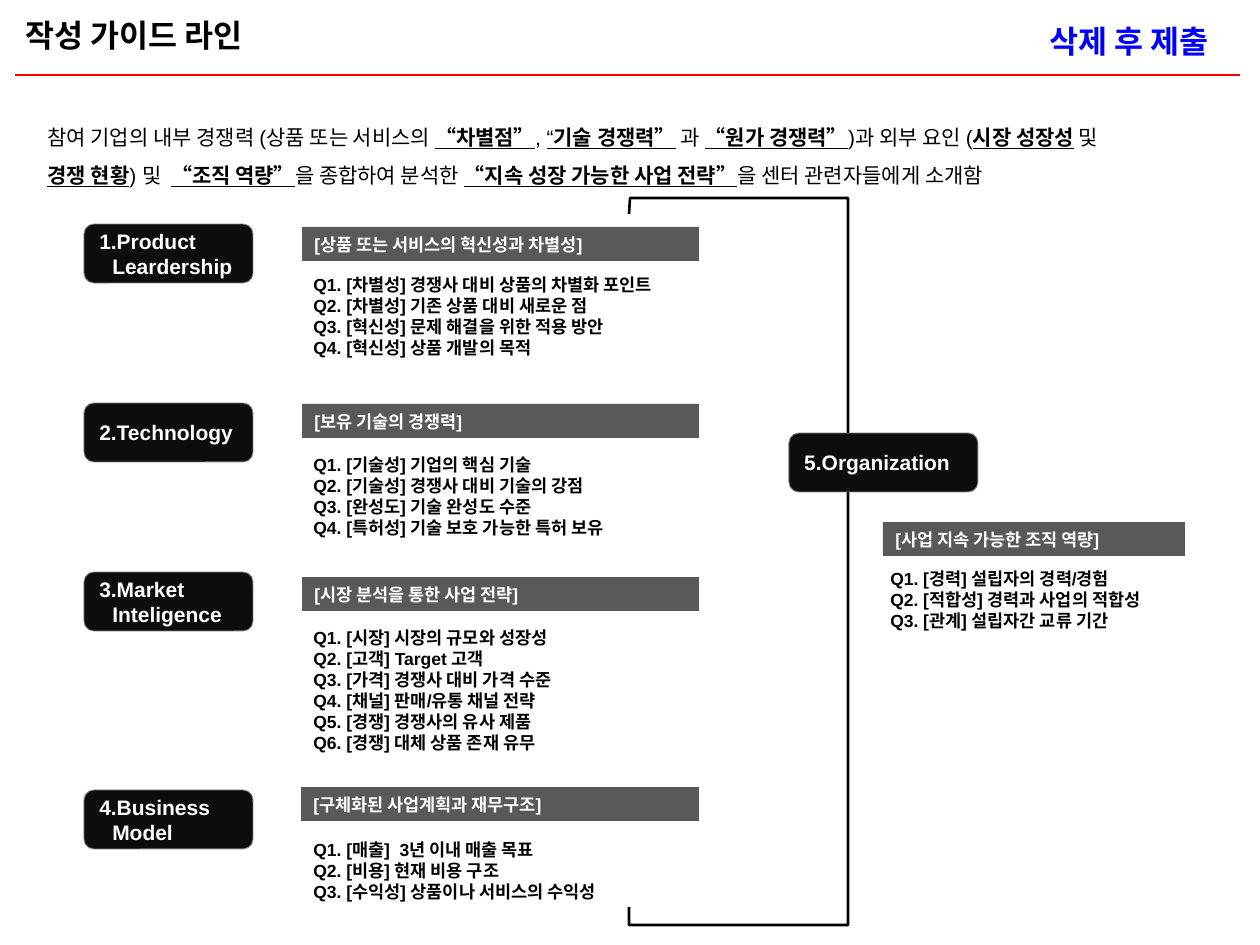
from lxml import etree
from pptx import Presentation
from pptx.dml.color import RGBColor
from pptx.enum.shapes import MSO_CONNECTOR, MSO_SHAPE
from pptx.enum.text import MSO_ANCHOR as ANCHOR, PP_ALIGN as ALIGN
from pptx.oxml.ns import qn
from pptx.util import Pt

EMU_PER_PX = 914400 / 126
FONT = "Arial"
BLACK = RGBColor(0x00, 0x00, 0x00)
WHITE = RGBColor(0xFF, 0xFF, 0xFF)
RED = RGBColor(0xFF, 0x00, 0x00)
BLUE = RGBColor(0x00, 0x00, 0xFF)
CHARCOAL = RGBColor(0x0D, 0x0D, 0x0D)
DARK_GRAY = RGBColor(0x59, 0x59, 0x59)
MID_GRAY = RGBColor(0x80, 0x80, 0x80)

# Label: text, box. Header: text, box. Questions: left, top, width, lines.
SECTIONS = [
    (("1.Product Leardership", (84, 224, 169, 59)),
     ("[상품 또는 서비스의 혁신성과 차별성]", (302, 227, 397, 34)),
     (301, 268, 404, ["Q1. [차별성] 경쟁사 대비 상품의 차별화 포인트",
                      "Q2. [차별성] 기존 상품 대비 새로운 점",
                      "Q3. [혁신성] 문제 해결을 위한 적용 방안",
                      "Q4. [혁신성] 상품 개발의 목적"])),
    (("2.Technology", (84, 403, 169, 59)),
     ("[보유 기술의 경쟁력]", (302, 404, 397, 34)),
     (301, 448, 352, ["Q1. [기술성] 기업의 핵심 기술",
                      "Q2. [기술성] 경쟁사 대비 기술의 강점",
                      "Q3. [완성도] 기술 완성도 수준",
                      "Q4. [특허성] 기술 보호 가능한 특허 보유"])),
    (("3.Market Inteligence", (84, 572, 169, 59)),
     ("[시장 분석을 통한 사업 전략]", (302, 577, 397, 34)),
     (301, 621, 292, ["Q1. [시장] 시장의 규모와 성장성",
                      "Q2. [고객] Target 고객",
                      "Q3. [가격] 경쟁사 대비 가격 수준",
                      "Q4. [채널] 판매/유통 채널 전략",
                      "Q5. [경쟁] 경쟁사의 유사 제품",
                      "Q6. [경쟁] 대체 상품 존재 유무"])),
    (("4.Business Model", (84, 790, 169, 59)),
     ("[구체화된 사업계획과 재무구조]", (301, 787, 398, 34)),
     (301, 833, 339, ["Q1. [매출]  3년 이내 매출 목표",
                      "Q2. [비용] 현재 비용 구조",
                      "Q3. [수익성] 상품이나 서비스의 수익성"])),
    (("5.Organization", (789, 433, 189, 59)),
     ("[사업 지속 가능한 조직 역량]", (883, 522, 302, 34)),
     (878, 562, 304, ["Q1. [경력] 설립자의 경력/경험",
                      "Q2. [적합성] 경력과 사업의 적합성",
                      "Q3. [관계] 설립자간 교류 기간"])),
]

# Runs: text, bold, underline
PLAIN, KEY, UNDERLINED = (False, False), (True, True), (False, True)
INTRO = [
    [("참여 기업의 내부 경쟁력 (상품 또는 서비스의 ", PLAIN), ("“차별점”", KEY),
     (", ", PLAIN), ("“", UNDERLINED), ("기술 경쟁력”", KEY), (" 과 ", PLAIN),
     ("“원가 경쟁력”", KEY), (")과 외부 요인 (", PLAIN), ("시장 성장성", KEY),
     (" 및", PLAIN)],
    [("경쟁 현황", KEY), (") 및  ", PLAIN), ("“조직 역량”", KEY),
     ("을 종합하여 분석한 ", PLAIN), ("“지속 성장 가능한 사업 전략”", KEY),
     ("을 센터 관련자들에게 소개함", PLAIN)],
]
BRACKET = [(629, 214), (630, 198), (848, 198), (848, 925), (629, 925), (629, 907)]


def px(value):
    return round(value * EMU_PER_PX)


def set_font(paragraph, size, color, bold=None):
    font = paragraph.font
    font.name, font.size, font.bold = FONT, Pt(size), bold
    font.color.rgb = color
    paragraph.alignment = ALIGN.LEFT


def add_text(slide, box, lines, size, color=BLACK):
    frame = slide.shapes.add_textbox(*map(px, box)).text_frame
    frame.word_wrap = True
    frame.text = "\n".join(lines)
    for paragraph in frame.paragraphs:
        set_font(paragraph, size, color, True)


def add_intro(slide, box):
    frame = slide.shapes.add_textbox(*map(px, box)).text_frame
    frame.word_wrap = True
    for index, runs in enumerate(INTRO):
        paragraph = frame.add_paragraph() if index else frame.paragraphs[0]
        set_font(paragraph, 12, BLACK)
        paragraph.line_spacing = 1.5
        for text, (bold, underline) in runs:
            run = paragraph.add_run()
            run.text = text
            run.font.bold, run.font.underline = bold, underline


def add_box(slide, kind, box, text, size, fill):
    shape = slide.shapes.add_shape(kind, *map(px, box))
    shape.shadow.inherit = False
    shape.fill.solid()
    shape.fill.fore_color.rgb = fill
    shape.line.fill.background()
    frame = shape.text_frame
    frame.word_wrap = True
    frame.vertical_anchor = ANCHOR.MIDDLE
    frame.text = text
    set_font(frame.paragraphs[0], size, WHITE, True)
    return shape


def add_label(slide, text, box):
    shape = add_box(slide, MSO_SHAPE.ROUNDED_RECTANGLE, box, text, 12, CHARCOAL)
    shape.line.color.rgb = MID_GRAY
    shape.line.width = Pt(0.5)
    # Hanging indent for the second line
    properties = shape.text_frame.paragraphs[0]._p.get_or_add_pPr()
    properties.set("marL", str(px(13)))
    properties.set("indent", str(px(-13)))


def add_questions(slide, left, top, width, lines):
    add_text(slide, (left, top, width, 21 * len(lines) + 13), lines, 10)


def add_rule(slide, left, right, y):
    line = slide.shapes.add_connector(
        MSO_CONNECTOR.STRAIGHT, px(left), px(y), px(right), px(y))
    line.line.color.rgb = RED
    line.line.width = Pt(1.5)
    etree.SubElement(line._element.spPr, qn("a:effectLst"))


def add_bracket(slide, points):
    builder = slide.shapes.build_freeform(*points[0], scale=EMU_PER_PX)
    builder.add_line_segments(points[1:], close=False)
    shape = builder.convert_to_shape()
    shape.shadow.inherit = False
    shape.fill.background()
    shape.line.color.rgb = BLACK
    shape.line.width = Pt(1.5)


def main():
    presentation = Presentation()
    presentation.slide_width, presentation.slide_height = px(1260), px(945)
    slide = presentation.slides.add_slide(presentation.slide_layouts[6])

    # Title row and introduction
    add_rule(slide, 15, 1240, 75)
    add_text(slide, (13, 10, 271, 50), ["작성 가이드 라인"], 18)
    add_text(slide, (1037, 16, 207, 50), ["삭제 후 제출"], 18, BLUE)
    add_intro(slide, (35, 106, 1154, 89))

    # Bracket behind the organization label, then the five sections
    add_bracket(slide, BRACKET)
    for label, (header, header_box), questions in SECTIONS:
        add_label(slide, *label)
        add_box(slide, MSO_SHAPE.RECTANGLE, header_box, header, 10, DARK_GRAY)
        add_questions(slide, *questions)

    presentation.save("out.pptx")


if __name__ == "__main__":
    main()
